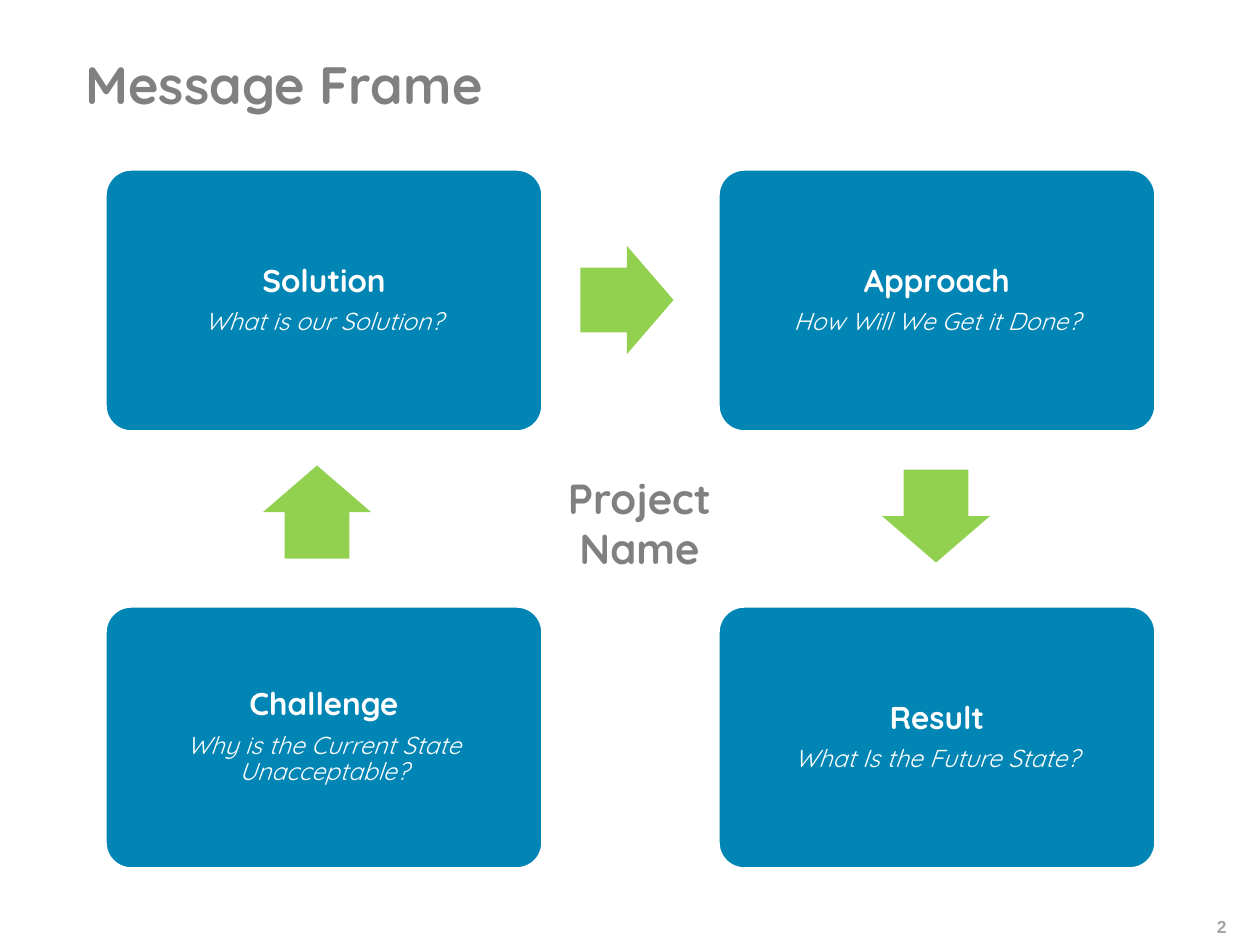
from dataclasses import dataclass
from pptx import Presentation
from pptx.dml.color import RGBColor
from pptx.enum.shapes import MSO_SHAPE
from pptx.enum.text import MSO_ANCHOR, PP_ALIGN
from pptx.util import Emu, Pt


@dataclass(frozen=True)
class Theme:
    """Colours, fonts and type sizes of the slide."""
    blue: str = "0085B4"
    green: str = "92D050"
    white: str = "FFFFFF"
    gray: str = "808080"
    pale: str = "A5A5A5"
    face: str = "Quicksand"
    plain: str = "Arial"
    title: int = 30
    name: int = 24
    head: int = 18
    sub: int = 14
    page: int = 10


THEME = Theme()
SCALE = 914400 / 126
COLS = (105, 718)
ROWS = (169, 606)
CARD = (438, 263)
ARROW = (93, 108)
CARDS = (
    (0, 0, "Solution", "What is our Solution?"),
    (1, 0, "Approach", "How Will We Get it Done?"),
    (1, 1, "Result", "What Is the Future State?"),
    (0, 1, "Challenge", "Why is the Current State Unacceptable?"),
)
ARROWS = ((627, 300, 0), (936, 516, 90), (317, 512, 270))


def px(n):
    """Turn pixels into EMU."""
    return Emu(round(n * SCALE))


def paint(para, size, color, face=THEME.face, bold=True, italic=False):
    """Format every run of a paragraph."""
    for run in para.runs:
        font = run.font
        font.name, font.size = face, Pt(size)
        font.bold, font.italic = bold, italic
        font.color.rgb = RGBColor.from_string(color)


def add_form(slide, kind, box, fill=None, line=None):
    """Add a preset shape with no shadow."""
    form = slide.shapes.add_shape(kind, *map(px, box))
    form.shadow.inherit = False
    if fill:
        form.fill.solid()
        form.fill.fore_color.rgb = RGBColor.from_string(fill)
    else:
        form.fill.background()
    if line:
        form.line.color.rgb = RGBColor.from_string(line)
        form.line.width = Pt(2)
    else:
        form.line.fill.background()
    return form


def add_card(slide, col, row, head, sub):
    """Add a rounded card with a heading and a question."""
    box = (COLS[col], ROWS[row], *CARD)
    card = add_form(slide, MSO_SHAPE.ROUNDED_RECTANGLE, box, THEME.blue, THEME.white)
    card.adjustments[0] = 0.1
    frame = card.text_frame
    frame.word_wrap = True
    frame.vertical_anchor = MSO_ANCHOR.MIDDLE
    frame.margin_left = frame.margin_right = px(9)
    frame.margin_top = frame.margin_bottom = px(9)
    frame.text = f"{head}\n{sub}"
    top, low = frame.paragraphs
    for para, gap in ((top, 6), (low, 5)):
        para.alignment = PP_ALIGN.CENTER
        para.line_spacing = 0.9
        para.space_after = Pt(gap)
    paint(top, THEME.head, THEME.white)
    paint(low, THEME.sub, THEME.white, bold=False, italic=True)


def add_arrow(slide, mid_x, mid_y, turn):
    """Add a block arrow centred on a point."""
    wide, high = ARROW
    box = (mid_x - wide / 2, mid_y - high / 2, wide, high)
    arrow = add_form(slide, MSO_SHAPE.RIGHT_ARROW, box, THEME.green)
    arrow.adjustments[0] = 0.6
    arrow.adjustments[1] = 0.5
    arrow.rotation = turn


def add_name(slide, text):
    """Add the project name at the centre of the cycle."""
    form = add_form(slide, MSO_SHAPE.ROUNDED_RECTANGLE, (501, 463, 277, 120))
    frame = form.text_frame
    frame.word_wrap = True
    frame.vertical_anchor = MSO_ANCHOR.MIDDLE
    frame.text = text
    para = frame.paragraphs[0]
    para.alignment = PP_ALIGN.CENTER
    paint(para, THEME.name, THEME.gray)


def add_label(slide, box, text, align, anchor, size, color, face):
    """Add a single line of bold text."""
    frame = slide.shapes.add_textbox(*map(px, box)).text_frame
    frame.word_wrap = True
    frame.vertical_anchor = anchor
    frame.text = text
    para = frame.paragraphs[0]
    para.alignment = align
    paint(para, size, color, face)


def main():
    """Build the slide and save it."""
    deck = Presentation()
    deck.slide_width, deck.slide_height = px(1260), px(945)
    slide = deck.slides.add_slide(deck.slide_layouts[6])
    add_label(slide, (73, 21, 1105, 126), "Message Frame", PP_ALIGN.LEFT,
              MSO_ANCHOR.MIDDLE, THEME.title, THEME.gray, THEME.face)
    add_label(slide, (1144, 910, 95, 32), "2", PP_ALIGN.RIGHT,
              MSO_ANCHOR.TOP, THEME.page, THEME.pale, THEME.plain)
    for card in CARDS:
        add_card(slide, *card)
    for arrow in ARROWS:
        add_arrow(slide, *arrow)
    add_name(slide, "Project Name")
    deck.save("out.pptx")


if __name__ == "__main__":
    main()
